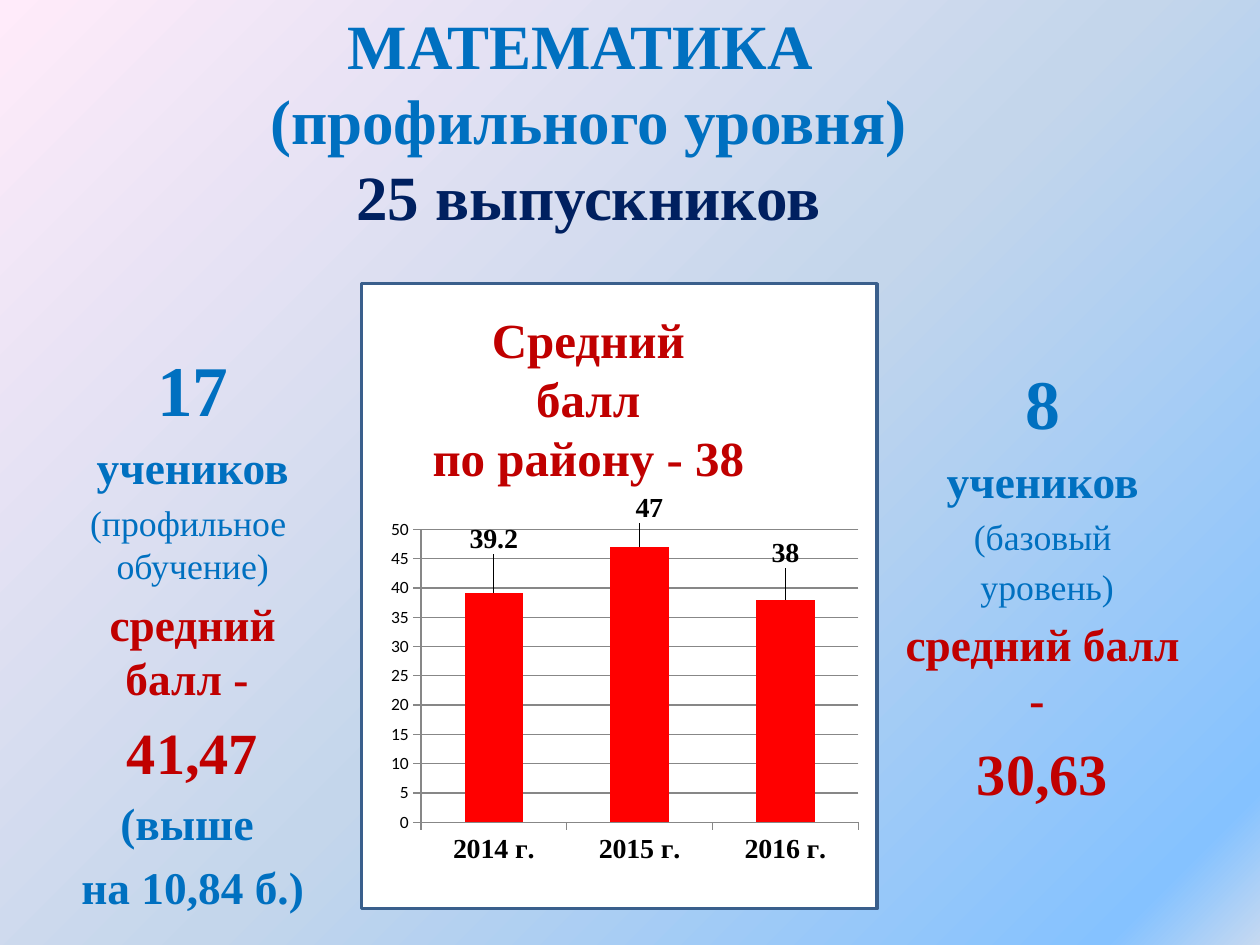
from dataclasses import dataclass

from pptx import Presentation
from pptx.chart.data import CategoryChartData
from pptx.dml.color import RGBColor
from pptx.enum.chart import XL_CHART_TYPE as ChartType
from pptx.enum.chart import XL_LABEL_POSITION as LabelPosition
from pptx.enum.chart import XL_TICK_MARK as TickMark
from pptx.enum.shapes import MSO_SHAPE as ShapeKind
from pptx.enum.text import MSO_ANCHOR as Anchor
from pptx.enum.text import MSO_AUTO_SIZE as AutoSize
from pptx.enum.text import PP_ALIGN as Align
from pptx.oxml import parse_xml
from pptx.oxml.ns import nsdecls
from pptx.util import Cm, Pt


@dataclass(frozen=True)
class Theme:
    blue: str = "0070C0"
    navy: str = "002060"
    crimson: str = "C00000"
    bar: str = "FF0000"
    black: str = "000000"
    white: str = "FFFFFF"
    frame: str = "3A5F8C"
    grid: str = "878787"
    serif: str = "Times New Roman"
    sans: str = "Calibri"
    title: float = 36
    caption: float = 28
    word: float = 25.9
    note: float = 20.4
    score: float = 33.3
    axis: float = 10
    label: float = 16
    backdrop: tuple = ((0, "C6D9F1"), (7, "85C2FF"), (48, "C4D6EB"), (100, "FFEBFA"))


@dataclass(frozen=True)
class Area:
    left: float
    top: float
    width: float
    height: float

    def lengths(self) -> tuple:
        return Cm(self.left), Cm(self.top), Cm(self.width), Cm(self.height)


@dataclass(frozen=True)
class Line:
    text: str
    size: float
    color: str
    bold: bool = True


@dataclass(frozen=True)
class Result:
    year: str
    score: float
    shift_x: float
    shift_y: float


THEME = Theme()

TITLE = [
    Line("МАТЕМАТИКА ", THEME.title, THEME.blue),
    Line("(профильного уровня)", THEME.title, THEME.blue),
    Line("25 выпускников", THEME.title, THEME.navy),
]
PROFILE = [
    Line("17", 40.7, THEME.blue),
    Line("учеников", THEME.word, THEME.blue),
    Line("(профильное  обучение)", THEME.note, THEME.blue, False),
    Line("средний балл - ", THEME.word, THEME.crimson),
    Line("41,47", THEME.score, THEME.crimson),
    Line("(выше ", THEME.word, THEME.blue),
    Line("на 10,84 б.)", THEME.word, THEME.blue),
]
BASIC = [
    Line("8", 39.8, THEME.blue),
    Line("учеников", THEME.word, THEME.blue),
    Line("(базовый", THEME.note, THEME.blue, False),
    Line(" уровень)", THEME.note, THEME.blue, False),
    Line("средний балл - ", THEME.word, THEME.crimson),
    Line("30,63", THEME.score, THEME.crimson),
]
CAPTION = [
    Line(text, THEME.caption, THEME.crimson)
    for text in ("Средний", " балл ", "по району - 38")
]
RESULTS = [
    Result("2014 г.", 39.2, 0, -0.09),
    Result("2015 г.", 47, 0.02, -0.05),
    Result("2016 г.", 38, 0, -0.07),
]


def style_font(font, size: float, color: str, name: str, bold: bool) -> None:
    font.size = Pt(size)
    font.name = name
    font.bold = bold
    font.color.rgb = RGBColor.from_string(color)


def add_span(para, line: Line) -> None:
    span = para.add_run()
    span.text = line.text
    style_font(span.font, line.size, line.color, THEME.serif, line.bold)


def paint_background(page) -> None:
    page.background.fill.solid()
    holder = page._element.xpath("p:cSld/p:bg/p:bgPr")[0]
    stops = "".join(
        f'<a:gs pos="{place * 1000}"><a:srgbClr val="{color}"/></a:gs>'
        for place, color in THEME.backdrop
    )
    gradient = parse_xml(
        f'<a:gradFill {nsdecls("a")} rotWithShape="1"><a:gsLst>{stops}</a:gsLst>'
        '<a:path path="circle"><a:fillToRect l="100000" t="100000"/></a:path></a:gradFill>'
    )
    holder.replace(holder[0], gradient)


def add_frame(page, area: Area) -> None:
    box = page.shapes.add_shape(ShapeKind.RECTANGLE, *area.lengths())
    box.shadow.inherit = False
    box.fill.solid()
    box.fill.fore_color.rgb = RGBColor.from_string(THEME.white)
    box.line.color.rgb = RGBColor.from_string(THEME.frame)
    box.line.width = Pt(2)


def fill_title(page, area: Area, lines: list[Line]) -> None:
    box = page.shapes.title
    box.left, box.top, box.width, box.height = area.lengths()
    frame = box.text_frame
    frame.auto_size = AutoSize.NONE
    frame.vertical_anchor = Anchor.MIDDLE
    para = frame.paragraphs[0]
    para.alignment = Align.CENTER
    for number, line in enumerate(lines):
        if number:
            para.add_line_break()
        add_span(para, line)
    for gap in para._p.xpath("a:br"):
        gap.append(parse_xml(f'<a:rPr {nsdecls("a")} sz="{int(THEME.title * 100)}"/>'))


def add_text(page, area: Area, lines: list[Line], wrap: bool, gap: float) -> None:
    frame = page.shapes.add_textbox(*area.lengths()).text_frame
    frame.word_wrap = wrap
    frame.auto_size = AutoSize.NONE if wrap else AutoSize.SHAPE_TO_FIT_TEXT
    for number, line in enumerate(lines):
        para = frame.add_paragraph() if number else frame.paragraphs[0]
        para.alignment = Align.CENTER
        para.space_before = Pt(round(line.size * gap, 1))
        add_span(para, line)


def manual_layout(**values) -> object:
    parts = "".join(f'<c:{name} val="{value}"/>' for name, value in values.items())
    return parse_xml(
        f'<c:layout {nsdecls("c")}><c:manualLayout>{parts}</c:manualLayout></c:layout>'
    )


def add_scores(page, area: Area, results: list[Result]) -> None:
    data = CategoryChartData()
    data.categories = [result.year for result in results]
    data.add_series("Series 1", [result.score for result in results])
    chart = page.shapes.add_chart(
        ChartType.COLUMN_CLUSTERED, *area.lengths(), data
    ).chart
    chart.has_legend = False
    chart.has_title = False
    style_font(chart.font, THEME.axis, THEME.black, THEME.sans, False)

    grey = RGBColor.from_string(THEME.grid)
    for axis in (chart.category_axis, chart.value_axis):
        axis.major_tick_mark = TickMark.OUTSIDE
        axis.format.line.color.rgb = grey
    style_font(chart.category_axis.tick_labels.font, THEME.label, THEME.black, THEME.serif, True)
    scale = chart.value_axis
    scale.minimum_scale, scale.maximum_scale, scale.major_unit = 0, 50, 5
    scale.has_major_gridlines = True
    scale.major_gridlines.format.line.color.rgb = grey

    plot = chart.plots[0]
    plot.gap_width = 150
    plot.vary_by_categories = False
    series = plot.series[0]
    series.format.fill.solid()
    series.format.fill.fore_color.rgb = RGBColor.from_string(THEME.bar)
    series.data_labels.show_value = True
    style_font(series.data_labels.font, THEME.label, THEME.black, THEME.serif, True)
    for number in range(len(results)):
        label = series.points[number].data_label
        style_font(label.font, THEME.label, THEME.black, THEME.serif, True)
        label.position = LabelPosition.OUTSIDE_END

    space = chart._chartSpace
    for result, label in zip(results, space.xpath(".//c:dLbl")):
        label.insert(1, manual_layout(x=result.shift_x, y=result.shift_y))
    plot_area = space.xpath(".//c:plotArea")[0]
    for old in plot_area.xpath("c:layout"):
        plot_area.remove(old)
    plot_area.insert(0, manual_layout(
        layoutTarget="inner", xMode="edge", yMode="edge", x=0.08, y=0.08, w=0.9, h=0.79
    ))


def main() -> None:
    deck = Presentation()
    deck.slide_width, deck.slide_height = Cm(25.4), Cm(19.05)
    page = deck.slides.add_slide(deck.slide_layouts[5])
    paint_background(page)
    add_frame(page, Area(7.29, 5.72, 10.39, 12.6))
    fill_title(page, Area(0.43, 1.12, 22.86, 2.59), TITLE)
    add_text(page, Area(0.89, 6.83, 5.99, 10.39), PROFILE, True, 0.2)
    add_text(page, Area(17.91, 7.14, 6.22, 9.88), BASIC, True, 0.2)
    add_text(page, Area(8.43, 6.12, 6.86, 3.84), CAPTION, False, 0)
    add_scores(page, Area(7.7, 9.93, 9.8, 7.62), RESULTS)
    deck.save("out.pptx")


if __name__ == "__main__":
    main()
